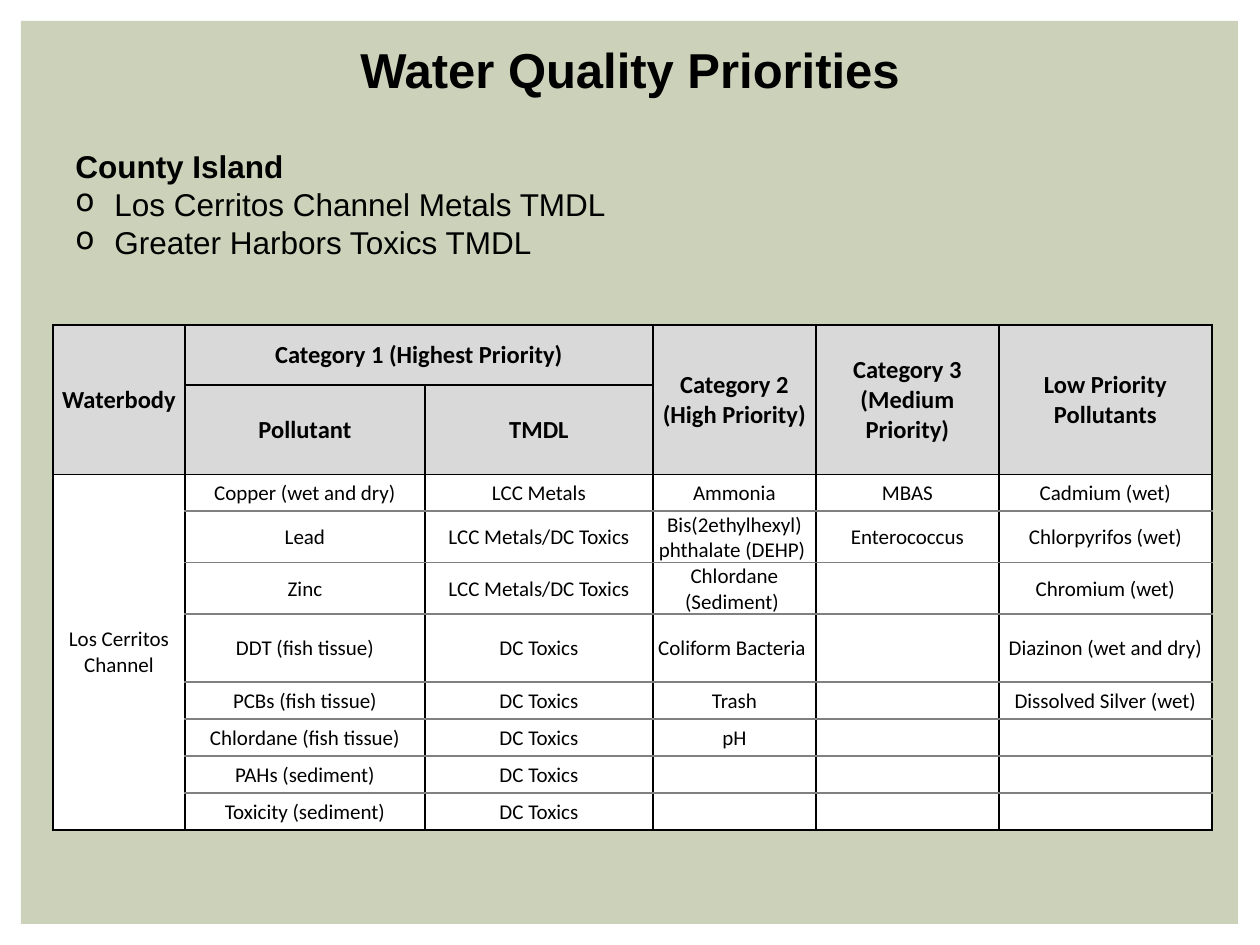
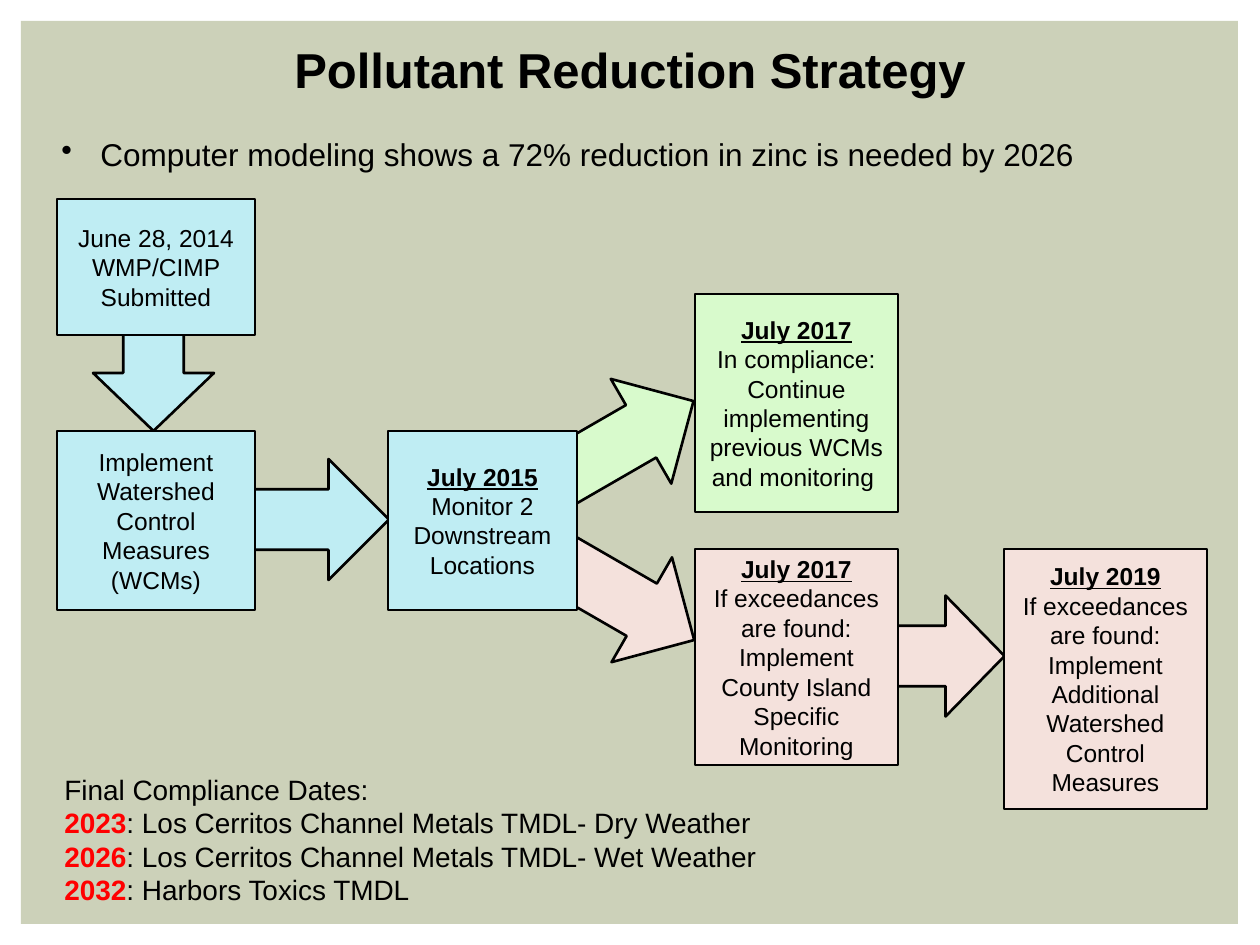
from lxml.etree import SubElement
from pptx import Presentation
from pptx.dml.color import RGBColor
from pptx.enum.shapes import MSO_SHAPE
from pptx.enum.text import MSO_ANCHOR, MSO_AUTO_SIZE, PP_ALIGN
from pptx.oxml import parse_xml
from pptx.oxml.ns import nsdecls, qn
from pptx.util import Emu, Pt

DPI = 126
INK = {
    "band": "CCD1B9", "black": "000000", "white": "FFFFFF", "head": "D9D9D9",
    "grey": "808080", "blue": "BFEDF3", "green": "D8FACC", "pink": "F4E1DC",
    "red": "FF0000",
}
COLS = [132, 240, 228, 163, 183, 213]
ROWS = [60, 50, 37, 49, 49, 68, 37, 37, 37, 37]
CELLS = [
    ["Waterbody", "Category 1 (Highest Priority)", "", "Category 2 (High Priority)",
     "Category 3 (Medium Priority)", "Low Priority Pollutants"],
    ["", "Pollutant", "TMDL", "", "", ""],
    ["Los Cerritos Channel", "Copper (wet and dry)", "LCC Metals", "Ammonia",
     "MBAS", "Cadmium (wet)"],
    ["", "Lead", "LCC Metals/DC Toxics", "Bis(2ethylhexyl) phthalate (DEHP) ",
     "Enterococcus", "Chlorpyrifos (wet)"],
    ["", "Zinc", "LCC Metals/DC Toxics", "Chlordane (Sediment) ", "", "Chromium (wet)"],
    ["", "DDT (fish tissue)", "DC Toxics", "Coliform Bacteria ", "",
     "Diazinon (wet and dry)"],
    ["", "PCBs (fish tissue)", "DC Toxics", "Trash", "", "Dissolved Silver (wet)"],
    ["", "Chlordane (fish tissue)", "DC Toxics", "pH", "", ""],
    ["", "PAHs (sediment)", "DC Toxics", "", "", ""],
    ["", "Toxicity (sediment)", "DC Toxics", "", "", ""],
]
SPANS = [(0, 0, 1, 0), (0, 1, 0, 2), (0, 3, 1, 3), (0, 4, 1, 4), (0, 5, 1, 5),
         (2, 0, 9, 0)]
ARROWS = [
    (561, 514, 121, 168, 300, "pink"),
    (255, 446, 121, 147, 270, "blue"),
    (93, 315, 121, 116, 0, "blue"),
    (885, 597, 121, 118, 270, "pink"),
    (562, 360, 121, 164, 240, "green"),
]
STEPS = [
    (57, 199, 198, 136, "blue", "", ["June 28, 2014", "WMP/CIMP Submitted"]),
    (57, 431, 198, 179, "blue", "", ["Implement Watershed Control Measures (WCMs)"]),
    (695, 549, 203, 216, "pink", "July 2017",
     ["If exceedances are found:", "Implement County Island Specific Monitoring"]),
    (695, 294, 203, 218, "green", "July 2017",
     ["In compliance:", "Continue implementing previous WCMs and monitoring "]),
    (388, 431, 189, 179, "blue", "July 2015", ["Monitor 2 Downstream Locations"]),
    (1004, 549, 203, 260, "pink", "July 2019",
     ["If exceedances are found:", "Implement Additional Watershed Control Measures"]),
]
DATES = [
    ("2023", ": Los Cerritos Channel Metals TMDL- Dry Weather"),
    ("2026", ": Los Cerritos Channel Metals TMDL- Wet Weather"),
    ("2032", ": Harbors Toxics TMDL"),
]


def px(num):
    return Emu(round(num * 914400 / DPI))


def tint(name):
    return RGBColor.from_string(INK[name])


def style(para, size, bold=False, face="Arial", align=None):
    para.alignment = align
    font = para.font
    font.name, font.size, font.bold = face, Pt(size), bold
    font.color.rgb = tint("black")


def fill(text, lines, size, **look):
    for pos, line in enumerate(lines):
        para = text.add_paragraph() if pos else text.paragraphs[0]
        para.text = line
        style(para, size, **look)
    return text.paragraphs


def bullet(para, mark):
    prop = para._p.get_or_add_pPr()
    prop.set("marL", str(px(39)))
    prop.set("indent", str(px(-39)))
    prop.insert(0, parse_xml(f'<a:buChar {nsdecls("a")} char="{mark}"/>'))


def note(slide, box, lines, size, **look):
    text = slide.shapes.add_textbox(*map(px, box)).text_frame
    text.word_wrap = True
    text.auto_size = MSO_AUTO_SIZE.SHAPE_TO_FIT_TEXT
    return fill(text, lines, size, **look)


def block(slide, kind, box, paint, line=True):
    shape = slide.shapes.add_shape(kind, *map(px, box))
    shape.shadow.inherit = False
    shape.fill.solid()
    shape.fill.fore_color.rgb = tint(paint)
    if line:
        shape.line.color.rgb = tint("black")
        shape.line.width = Pt(1.5)
    else:
        shape.line.fill.background()
    return shape


def page(deck, title):
    slide = deck.slides.add_slide(deck.slide_layouts[6])
    block(slide, MSO_SHAPE.RECTANGLE, (21, 21, 1217, 903), "band", line=False)
    return slide, title


def head(slide, title):
    note(slide, (21, 33, 1218, 72), [title], 28, bold=True, align=PP_ALIGN.CENTER)


def step(slide, box, paint, date, lines):
    shape = block(slide, MSO_SHAPE.FLOWCHART_PROCESS, box, paint)
    text = shape.text_frame
    text.word_wrap = True
    text.vertical_anchor = MSO_ANCHOR.MIDDLE
    top = [date] if date else []
    paras = fill(text, top + lines, 14, align=PP_ALIGN.CENTER)
    if date:
        paras[0].font.bold = paras[0].font.underline = True


def edge(cell, side, paint):
    line = SubElement(cell._tc.get_or_add_tcPr(), qn(f"a:ln{side}"), w=str(Pt(1)))
    solid = SubElement(line, qn("a:solidFill"))
    SubElement(solid, qn("a:srgbClr"), val=INK[paint])


def dress(cell, row, col):
    top = row < 2
    inner = not top and col > 0
    cell.margin_left = cell.margin_right = cell.margin_top = px(1)
    cell.margin_bottom = 0
    cell.vertical_anchor = MSO_ANCHOR.MIDDLE
    edge(cell, "L", "black")
    edge(cell, "R", "black")
    edge(cell, "T", "grey" if inner and row > 2 else "black")
    edge(cell, "B", "grey" if inner and row < len(ROWS) - 1 else "black")
    cell.fill.solid()
    cell.fill.fore_color.rgb = tint("head" if top else "white")
    fill(cell.text_frame, [CELLS[row][col]], 14 if top else 12, bold=top,
         face="Calibri", align=PP_ALIGN.CENTER)


def grid(slide):
    box = map(px, (53, 325, sum(COLS), sum(ROWS)))
    table = slide.shapes.add_table(len(ROWS), len(COLS), *box).table
    table.first_row = table.horz_banding = False
    for col, wide in zip(table.columns, COLS):
        col.width = px(wide)
    for row, tall in zip(table.rows, ROWS):
        row.height = px(tall)
    for row in range(len(ROWS)):
        for col in range(len(COLS)):
            dress(table.cell(row, col), row, col)
    for top, left, base, right in SPANS:
        table.cell(top, left).merge(table.cell(base, right))


def dates(slide):
    paras = note(slide, (52, 766, 959, 149),
                 ["Final Compliance Dates:"] + [""] * len(DATES), 16)
    for para, (year, goal) in zip(paras[1:], DATES):
        run = para.add_run()
        run.text = year
        run.font.bold = True
        run.font.color.rgb = tint("red")
        para.add_run().text = goal


def main():
    deck = Presentation()
    deck.slide_width, deck.slide_height = px(1260), px(945)

    slide, title = page(deck, "Water Quality Priorities")
    head(slide, title)
    paras = note(slide, (63, 141, 1166, 161),
                 ["County Island", "Los Cerritos Channel Metals TMDL",
                  "Greater Harbors Toxics TMDL"], 18)
    paras[0].font.bold = True
    for para in paras[1:]:
        bullet(para, "o")
    grid(slide)

    slide, title = page(deck, "Pollutant Reduction Strategy")
    for *box, turn, paint in ARROWS:
        block(slide, MSO_SHAPE.DOWN_ARROW, box, paint).rotation = turn
    head(slide, title)
    for *box, paint, date, lines in STEPS:
        step(slide, box, paint, date, lines)
    dates(slide)
    paras = note(slide, (49, 129, 1116, 50),
                 ["Computer modeling shows a 72% reduction in zinc is needed by 2026"], 18)
    bullet(paras[0], "•")

    deck.save("out.pptx")


if __name__ == "__main__":
    main()
